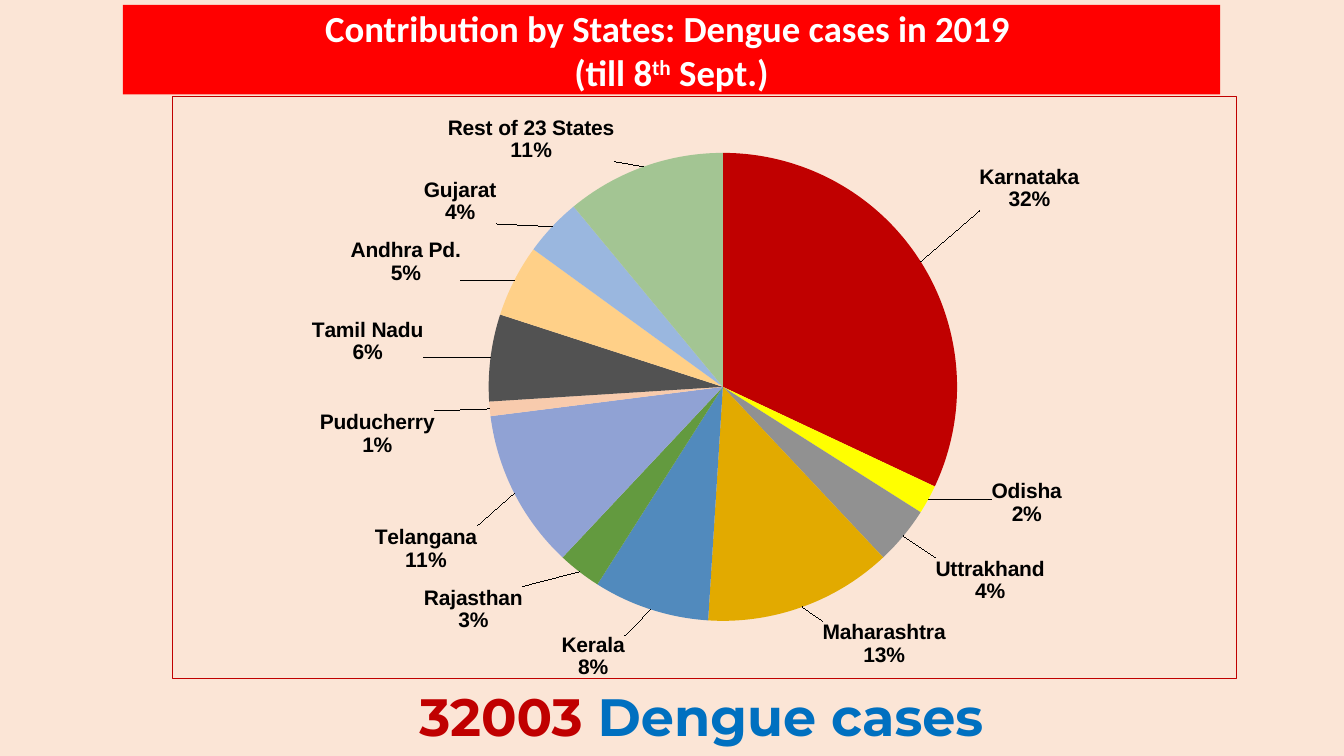
import math
from dataclasses import dataclass

import pptx
import pptx.chart.data
import pptx.dml.color
import pptx.enum.chart
import pptx.enum.shapes
import pptx.enum.text
import pptx.oxml
import pptx.oxml.ns
import pptx.util

Cm, Pt = pptx.util.Cm, pptx.util.Pt

COLORS = {
    "background": "FBE5D6", "banner": "FF0000", "white": "FFFFFF",
    "black": "000000", "total": "C00000", "caption": "0070C0",
}
CHART_LEFT, CHART_TOP, CHART_WIDTH, CHART_HEIGHT = 4.62, 2.59, 28.63, 15.67
PIE_X, PIE_Y, PIE_RADIUS = 19.43, 10.4, 6.3
LABEL_HEIGHT = 1.21


@dataclass
class State:
    """A slice, with the centre and width of its label in cm."""
    name: str
    percent: int
    color: str
    label_x: float
    label_y: float
    label_width: float


STATES = [
    State("Karnataka", 32, "C00000", 27.55, 5.13, 2.69),
    State("Odisha", 2, "FFFF00", 27.47, 13.44, 1.88),
    State("Uttrakhand", 4, "919191", 26.5, 15.51, 2.93),
    State("Maharashtra", 13, "E2AA00", 23.72, 17.17, 3.31),
    State("Kerala", 8, "518ABD", 15.99, 17.56, 1.69),
    State("Rajasthan", 3, "639A3F", 12.82, 16.26, 2.63),
    State("Telangana", 11, "90A2D4", 11.58, 14.68, 2.74),
    State("Puducherry", 1, "F8CBAD", 10.28, 11.64, 3.09),
    State("Tamil Nadu", 6, "525252", 10.03, 9.19, 2.98),
    State("Andhra Pd.", 5, "FFD088", 11.05, 7.1, 2.93),
    State("Gujarat", 4, "9AB7DF", 12.47, 5.51, 1.94),
    State("Rest of 23 States", 11, "A3C593", 14.33, 3.87, 4.46),
]


def rgb(color: str) -> pptx.dml.color.RGBColor:
    return pptx.dml.color.RGBColor.from_string(color)


def chart_xml(body: str):
    return pptx.oxml.parse_xml(body.replace(
        ">", f" {pptx.oxml.ns.nsdecls('c', 'a')}>", 1))


def manual_layout(x: float, y: float, extra: str = "", size: str = "") -> str:
    return (f'<c:layout><c:manualLayout>{extra}<c:x val="{x:.4f}"/>'
            f'<c:y val="{y:.4f}"/>{size}</c:manualLayout></c:layout>')


def add_run(paragraph, text: str, font: str, size: int, color: str):
    run = paragraph.add_run()
    run.text = text
    run.font.name, run.font.size, run.font.bold = font, Pt(size), True
    run.font.color.rgb = rgb(color)
    return run


def label_offset(state: State, middle: float) -> tuple[float, float]:
    """Shift from the outside-end position, as a share of the chart."""
    angle = math.tau * middle / 100
    across, up = math.sin(angle), math.cos(angle)
    side = 0 if abs(across) < math.sin(math.radians(5)) else math.copysign(1, across)
    level = 0 if abs(up) < math.sin(math.radians(5)) else math.copysign(1, up)
    default_x = PIE_X + PIE_RADIUS * across + side * state.label_width / 2
    default_y = PIE_Y - PIE_RADIUS * up - level * LABEL_HEIGHT / 2
    return ((state.label_x - default_x) / CHART_WIDTH,
            (state.label_y - default_y) / CHART_HEIGHT)


def add_title(slide) -> None:
    banner = slide.shapes.add_shape(
        pptx.enum.shapes.MSO_SHAPE.RECTANGLE, Cm(3.3), Cm(0.13), Cm(29.49), Cm(2.41))
    banner.shadow.inherit = False
    banner.fill.solid()
    banner.fill.fore_color.rgb = rgb(COLORS["banner"])
    banner.line.fill.background()
    banner.text_frame.vertical_anchor = pptx.enum.text.MSO_ANCHOR.MIDDLE
    title = banner.text_frame.paragraphs[0]
    title.alignment = pptx.enum.text.PP_ALIGN.CENTER
    style = ("Calibri", 28, COLORS["white"])
    add_run(title, "Contribution by States: Dengue cases in 2019 ", *style)
    title.add_line_break()
    add_run(title, "(till 8", *style)
    ordinal = add_run(title, "th", *style)
    ordinal.font._element.set("baseline", "30000")
    add_run(title, " Sept.)", *style)


def add_total(slide) -> None:
    box = slide.shapes.add_textbox(Cm(11.02), Cm(18.26), Cm(16.64), Cm(1.96))
    box.text_frame.word_wrap = False
    total = box.text_frame.paragraphs[0]
    add_run(total, "32003 ", "Montserrat", 40, COLORS["total"])
    add_run(total, "Dengue cases", "Montserrat", 40, COLORS["caption"])


def add_pie(slide, states: list[State]) -> None:
    cases = pptx.chart.data.CategoryChartData()
    cases.categories = [state.name for state in states]
    cases.add_series("Series 1", [state.percent for state in states])
    pie = slide.shapes.add_chart(
        pptx.enum.chart.XL_CHART_TYPE.PIE, Cm(CHART_LEFT), Cm(CHART_TOP),
        Cm(CHART_WIDTH), Cm(CHART_HEIGHT), cases).chart
    pie.has_legend = pie.has_title = False
    pie.font.name, pie.font.size, pie.font.bold = "Arial", Pt(16), True
    pie.font.color.rgb = rgb(COLORS["black"])

    # Frame around the chart
    pie._chartSpace.find(pptx.oxml.ns.qn("c:chart")).addnext(chart_xml(
        '<c:spPr><a:noFill/><a:ln w="9525"><a:solidFill>'
        f'<a:srgbClr val="{COLORS["total"]}"/></a:solidFill></a:ln></c:spPr>'))

    # Place of the pie inside the frame
    plot_area = pie._chartSpace.chart.plotArea
    for layout in plot_area.findall(pptx.oxml.ns.qn("c:layout")):
        plot_area.remove(layout)
    plot_area.insert(0, chart_xml(manual_layout(
        (PIE_X - PIE_RADIUS - CHART_LEFT) / CHART_WIDTH,
        (PIE_Y - PIE_RADIUS - CHART_TOP) / CHART_HEIGHT,
        '<c:layoutTarget val="inner"/><c:xMode val="edge"/><c:yMode val="edge"/>',
        f'<c:w val="{2 * PIE_RADIUS / CHART_WIDTH:.4f}"/>'
        f'<c:h val="{2 * PIE_RADIUS / CHART_HEIGHT:.4f}"/>')))

    # Labels with leader lines
    plot = pie.plots[0]
    plot.vary_by_categories = True
    series = plot.series[0]
    labels = series.data_labels
    labels.show_category_name = labels.show_percentage = True
    labels.show_value = False
    labels.position = pptx.enum.chart.XL_LABEL_POSITION.OUTSIDE_END
    labels_xml = labels._element
    leader = labels_xml.find(pptx.oxml.ns.qn("c:showLeaderLines"))
    if leader is None:
        leader = chart_xml('<c:showLeaderLines val="1"/>'.replace("/>", "></c:showLeaderLines>"))
        labels_xml.append(leader)
    leader.set("val", "1")
    leader.addprevious(chart_xml("<c:separator>\n</c:separator>"))

    # Slice colours and label places
    start = 0
    for index, state in enumerate(states):
        fill = series.points[index].format.fill
        fill.solid()
        fill.fore_color.rgb = rgb(state.color)
        x, y = label_offset(state, start + state.percent / 2)
        start += state.percent
        labels_xml.insert(index, chart_xml(
            f'<c:dLbl><c:idx val="{index}"/>{manual_layout(x, y)}'
            '<c:dLblPos val="outEnd"/><c:showLegendKey val="0"/><c:showVal val="0"/>'
            '<c:showCatName val="1"/><c:showSerName val="0"/><c:showPercent val="1"/>'
            '<c:showBubbleSize val="0"/><c:separator>\n</c:separator></c:dLbl>'))


def main() -> None:
    deck = pptx.Presentation()
    deck.slide_width, deck.slide_height = Cm(36.12), Cm(20.32)
    slide = deck.slides.add_slide(deck.slide_layouts[6])
    slide.background.fill.solid()
    slide.background.fill.fore_color.rgb = rgb(COLORS["background"])
    add_total(slide)
    add_pie(slide, STATES)
    add_title(slide)
    deck.save("out.pptx")


if __name__ == "__main__":
    main()
